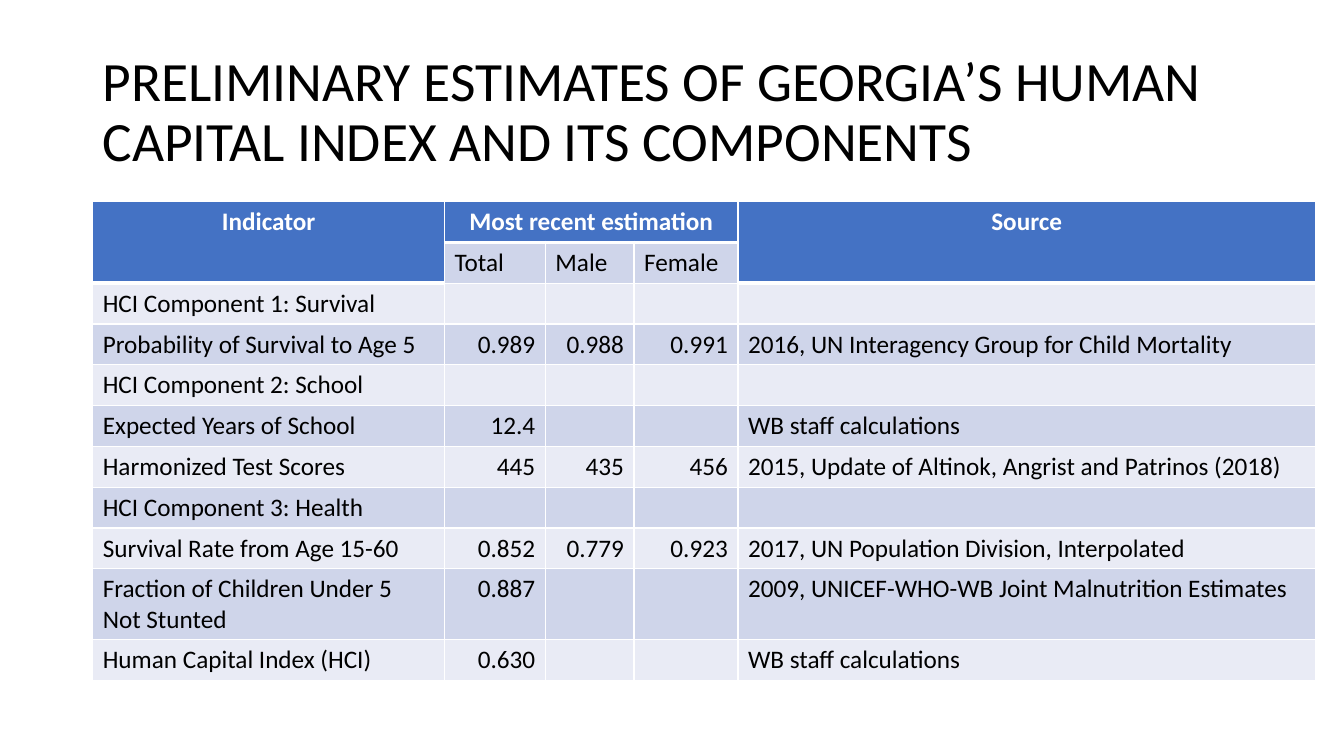
from dataclasses import dataclass

from lxml.etree import SubElement
from pptx import Presentation
from pptx.dml.color import RGBColor
from pptx.enum.text import MSO_ANCHOR, PP_ALIGN
from pptx.oxml.ns import qn
from pptx.util import Inches, Pt


@dataclass(frozen=True)
class Theme:
    """Colours and type sizes of the slide."""
    font: str = "Calibri"
    title_size: float = 39.6
    table_size: float = 18
    ink: str = "000000"
    paper: str = "FFFFFF"
    header: str = "4472C4"
    bands: tuple = ("E9EBF5", "CFD5EA")
    thin: float = 1
    thick: float = 3


THEME = Theme()
WIDTH, HEIGHT = Inches(13.33), Inches(7.5)
TITLE = "PRELIMINARY ESTIMATES OF GEORGIA’S HUMAN CAPITAL INDEX AND ITS COMPONENTS"
COLUMN_SHARES = (26.18, 7.5, 6.6, 7.73, 42.98)
ROW_SHARE, TALL_ROW_SHARE, TALL_ROW = 5.4, 9.4, 9
INDICATOR, SOURCE = 0, 4
ROWS = (
    ("Indicator", "Most recent estimation", "", "", "Source"),
    ("", "Total", "Male", "Female", ""),
    ("HCI Component 1: Survival", "", "", "", ""),
    ("Probability of Survival to Age 5", "0.989", "0.988", "0.991",
     "2016, UN Interagency Group for Child Mortality"),
    ("HCI Component 2: School", "", "", "", ""),
    ("Expected Years of School", "12.4", "", "", "WB staff calculations"),
    ("Harmonized Test Scores", "445", "435", "456",
     "2015, Update of Altinok, Angrist and Patrinos (2018)"),
    ("HCI Component 3: Health", "", "", "", ""),
    ("Survival Rate from Age 15-60", "0.852", "0.779", "0.923",
     "2017, UN Population Division, Interpolated"),
    ("Fraction of Children Under 5 Not Stunted", "0.887", "", "",
     "2009, UNICEF-WHO-WB Joint Malnutrition Estimates"),
    ("Human Capital Index (HCI)", "0.630", "", "", "WB staff calculations"),
)


def across(percent):
    """Return a share of the slide's width."""
    return round(WIDTH * percent / 100)


def down(percent):
    """Return a share of the slide's height."""
    return round(HEIGHT * percent / 100)


def style_text(paragraph, size, color, bold=False):
    """Format the paragraph and its runs."""
    for item in (paragraph, *paragraph.runs):
        item.font.name = THEME.font
        item.font.size = Pt(size)
        item.font.bold = bold
        item.font.color.rgb = RGBColor.from_string(color)


def add_title(slide):
    """Add the two-line title."""
    box = slide.shapes.add_textbox(across(6.9), down(5.33), across(86.25), down(19.33))
    frame = box.text_frame
    frame.word_wrap = True
    frame.vertical_anchor = MSO_ANCHOR.MIDDLE
    frame.text = TITLE
    para = frame.paragraphs[0]
    para.line_spacing = 0.9
    style_text(para, THEME.title_size, THEME.ink)


def is_header(row, column):
    """Tell whether a cell belongs to the blue header."""
    return row == 0 or (row == 1 and column in (INDICATOR, SOURCE))


def edge_above(row, column):
    """Return the rule width above a cell, thick directly below the header."""
    below_header = row > 0 and is_header(row - 1, column) and not is_header(row, column)
    return THEME.thick if below_header else THEME.thin


def add_borders(cell, top, bottom):
    """Draw the four rules of a cell."""
    properties = cell._tc.get_or_add_tcPr()
    widths = {"L": THEME.thin, "R": THEME.thin, "T": top, "B": bottom}
    for side, width in widths.items():
        line = SubElement(properties, qn(f"a:ln{side}"), w=str(Pt(width)))
        fill = SubElement(line, qn("a:solidFill"))
        SubElement(fill, qn("a:srgbClr"), val=THEME.paper)


def fill_cell(cell, row, column):
    """Write and format one table cell."""
    header = is_header(row, column)
    span = cell.span_height if cell.is_merge_origin else 1
    add_borders(cell, edge_above(row, column), edge_above(row + span, column))
    cell.fill.solid()
    cell.fill.fore_color.rgb = RGBColor.from_string(
        THEME.header if header else THEME.bands[row % 2])
    para = cell.text_frame.paragraphs[0]
    para.text = ROWS[row][column]
    if header:
        para.alignment = PP_ALIGN.CENTER
    elif row > 1 and INDICATOR < column < SOURCE:
        para.alignment = PP_ALIGN.RIGHT
    style_text(para, THEME.table_size, THEME.paper if header else THEME.ink, header)


def add_index_table(slide):
    """Add the table of index components."""
    heights = [TALL_ROW_SHARE if row == TALL_ROW else ROW_SHARE
               for row in range(len(ROWS))]
    table = slide.shapes.add_table(
        len(ROWS), len(COLUMN_SHARES), across(6.9), down(26.67),
        across(sum(COLUMN_SHARES)), down(sum(heights))).table
    for column, share in zip(table.columns, COLUMN_SHARES):
        column.width = across(share)
    for row, share in zip(table.rows, heights):
        row.height = down(share)
    for column in (INDICATOR, SOURCE):
        table.cell(0, column).merge(table.cell(1, column))
    table.cell(0, INDICATOR + 1).merge(table.cell(0, SOURCE - 1))
    for row in range(len(ROWS)):
        for column in range(len(COLUMN_SHARES)):
            fill_cell(table.cell(row, column), row, column)


def main():
    """Build and save the deck."""
    deck = Presentation()
    deck.slide_width, deck.slide_height = WIDTH, HEIGHT
    slide = deck.slides.add_slide(deck.slide_layouts[6])
    add_title(slide)
    add_index_table(slide)
    deck.save("out.pptx")


if __name__ == "__main__":
    main()
